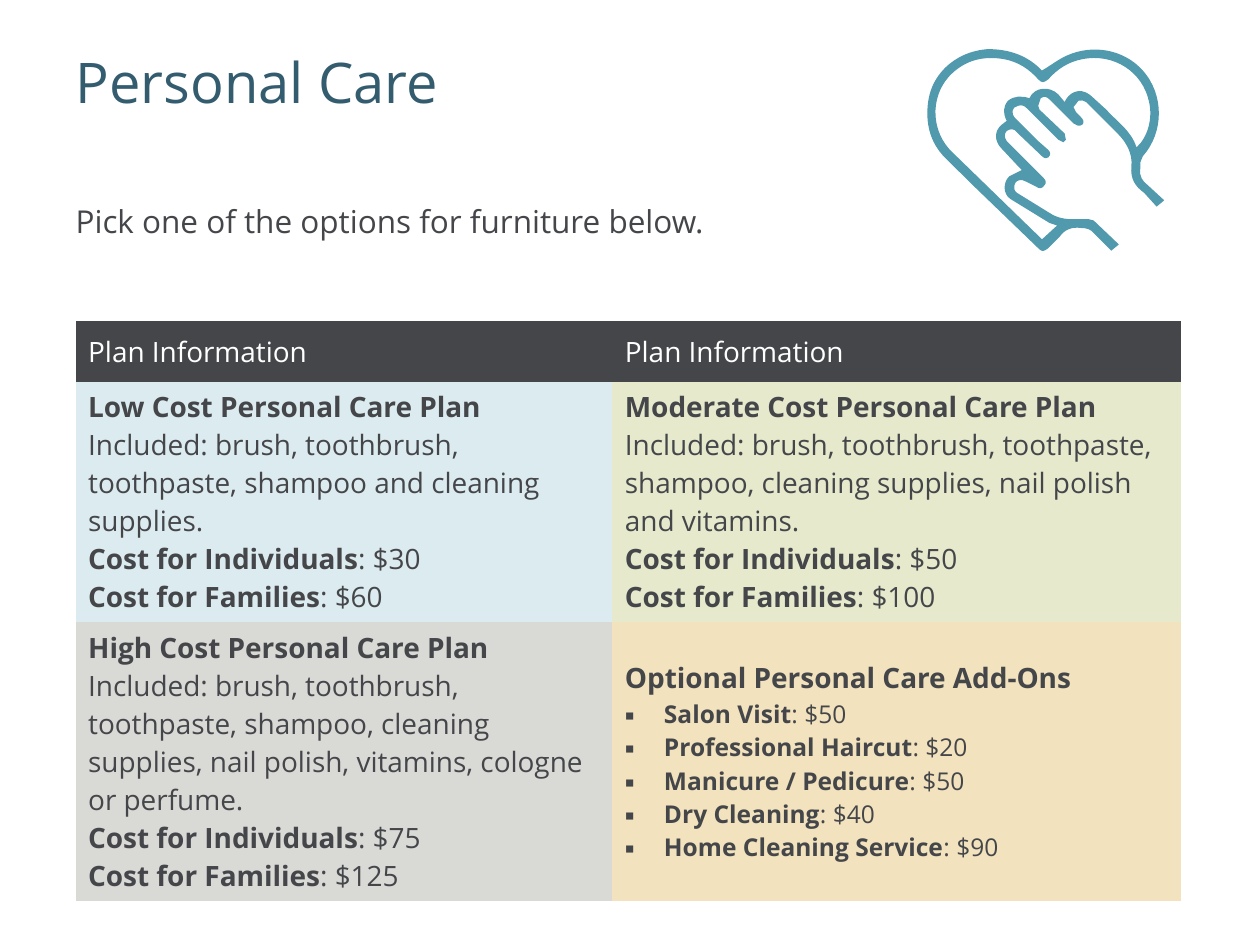
import dataclasses
import typing

import lxml.etree
import pptx
import pptx.dml.color
import pptx.enum.text
import pptx.oxml.ns
import pptx.util

Inches = pptx.util.Inches
qn = pptx.oxml.ns.qn
FONT = "Open Sans"
NO_STYLE = "{2D5ABB26-0587-4C30-8999-92F81FD0307C}"
COLUMN_WIDTHS = (4.26, 4.51)
ROW_HEIGHTS = (0.48, 1.91, 2.21)
COLORS = {
    "title": "345C6F",
    "ink": "44464A",
    "white": "FFFFFF",
    "low": "DCEBEF",
    "moderate": "E6E9CC",
    "high": "D9D9D6",
    "extras": "F2E2BD",
    "icon": "5199AD",
}


@dataclasses.dataclass
class Line:
    bold: str = ""
    plain: str = ""
    size: int = 16
    bullet: bool = False


@dataclasses.dataclass
class Panel:
    lines: list[Line]
    fill: str
    ink: str = "ink"


def plan(name: str, included: str, single: int, family: int, fill: str) -> Panel:
    return Panel([
        Line(f"{name} Cost Personal Care Plan"),
        Line(plain=f"Included: brush, toothbrush, toothpaste, {included}."),
        Line("Cost for Individuals", f": ${single}"),
        Line("Cost for Families", f": ${family}"),
    ], fill)


ADD_ONS = {
    "Salon Visit": 50,
    "Professional Haircut": 20,
    "Manicure / Pedicure": 50,
    "Dry Cleaning": 40,
    "Home Cleaning Service": 90,
}
HEADER = Panel([Line(plain="Plan Information")], "ink", "white")
EXTRAS = Panel(
    [Line("Optional Personal Care Add-Ons")]
    + [Line(name, f": ${cost}", 14, True) for name, cost in ADD_ONS.items()],
    "extras",
)
PANELS = [
    [HEADER, HEADER],
    [
        plan("Low", "shampoo and cleaning supplies", 30, 60, "low"),
        plan("Moderate", "shampoo, cleaning supplies, nail polish and vitamins", 50, 100, "moderate"),
    ],
    [
        plan("High", "shampoo, cleaning supplies, nail polish, vitamins, cologne or perfume", 75, 125, "high"),
        EXTRAS,
    ],
]

HEART_AND_HAND = [
    (8.88, 1.94), (8.82, 1.99), (8.68, 1.85),
    (8.66, 1.82, 8.62, 1.81, 8.58, 1.81), (8.51, 1.8, 8.45, 1.82, 8.41, 1.88),
    (8.32, 1.97), (8.28, 2, 8.27, 2, 8.24, 1.97), (7.69, 1.44), (7.48, 1.23),
    (7.4, 1.14, 7.36, 1.03, 7.36, 0.9), (7.36, 0.76, 7.4, 0.64, 7.5, 0.54),
    (7.59, 0.45, 7.71, 0.4, 7.84, 0.39), (8.01, 0.39, 8.15, 0.44, 8.26, 0.55),
    (8.27, 0.56), (8.34, 0.52, 8.4, 0.47, 8.47, 0.44),
    (8.67, 0.35, 8.92, 0.39, 9.07, 0.56), (9.24, 0.75, 9.24, 1.05, 9.07, 1.24),
    (9.05, 1.29), (9.05, 1.34), (9.04, 1.4, 9.07, 1.44, 9.11, 1.47),
    (9.24, 1.59), (9.18, 1.64), (9.08, 1.53), (9.01, 1.48, 8.97, 1.42, 8.98, 1.32),
    (8.99, 1.22, 8.94, 1.13, 8.87, 1.06), (8.62, 0.81),
    (8.6, 0.8, 8.58, 0.79, 8.56, 0.8), (8.52, 0.85), (8.54, 0.89), (8.57, 0.92),
    (8.6, 0.95, 8.61, 0.97, 8.59, 0.99), (8.56, 1.01, 8.54, 0.99, 8.52, 0.98),
    (8.33, 0.79), (8.31, 0.77, 8.29, 0.76, 8.26, 0.78), (8.24, 0.84), (8.25, 0.87),
    (8.45, 1.06), (8.46, 1.11), (8.44, 1.13), (8.4, 1.11), (8.15, 0.86),
    (8.13, 0.84, 8.11, 0.83, 8.08, 0.84), (8.03, 0.85, 8.02, 0.9, 8.06, 0.94),
    (8.24, 1.12), (8.32, 1.19), (8.34, 1.21, 8.34, 1.23, 8.32, 1.25),
    (8.31, 1.26, 8.29, 1.26, 8.27, 1.24), (8.07, 1.05),
    (8.05, 1.02, 8.02, 1.02, 7.99, 1.04), (7.97, 1.06, 7.97, 1.09, 7.99, 1.12),
    (8.02, 1.15), (8.28, 1.41), (8.3, 1.43, 8.31, 1.45, 8.29, 1.47),
    (8.27, 1.5, 8.25, 1.5, 8.22, 1.48), (8.14, 1.44),
    (8.11, 1.42, 8.07, 1.43, 8.06, 1.45), (8.04, 1.48, 8.05, 1.52, 8.07, 1.53),
    (8.33, 1.69), (8.39, 1.73, 8.45, 1.74, 8.52, 1.74), (8.64, 1.74), (8.68, 1.75),
]
HEART_INSIDE = [
    (9.02, 1.17), (9.11, 1.09, 9.15, 0.94, 9.12, 0.81),
    (9.07, 0.57, 8.84, 0.42, 8.59, 0.47), (8.48, 0.49, 8.39, 0.55, 8.32, 0.63),
    (8.28, 0.66, 8.27, 0.66, 8.24, 0.63), (8.17, 0.55, 8.08, 0.49, 7.97, 0.47),
    (7.8, 0.44, 7.65, 0.48, 7.53, 0.61), (7.38, 0.78, 7.39, 1.05, 7.56, 1.21),
    (8.25, 1.88), (8.28, 1.91), (8.27, 1.9), (8.39, 1.79), (8.33, 1.77), (8.02, 1.58),
    (7.96, 1.54, 7.96, 1.45, 8.01, 1.4), (8.11, 1.35), (8.09, 1.33), (7.95, 1.18),
    (7.89, 1.12, 7.89, 1.04, 7.95, 0.99), (7.99, 0.96),
    (7.96, 0.9, 7.96, 0.85, 8, 0.8), (8.05, 0.76, 8.11, 0.76, 8.17, 0.78),
    (8.21, 0.69, 8.33, 0.68, 8.4, 0.75), (8.45, 0.81), (8.46, 0.79),
    (8.51, 0.71, 8.6, 0.7, 8.67, 0.77), (8.78, 0.87),
    (8.87, 0.97, 8.98, 1.04, 9.02, 1.17),
]


def color(name: str) -> pptx.dml.color.RGBColor:
    return pptx.dml.color.RGBColor.from_string(COLORS[name])


def style(span: typing.Any, size: int, ink: str, bold: bool = False) -> None:
    span.font.name = FONT
    span.font.size = pptx.util.Pt(size)
    span.font.bold = bold
    span.font.color.rgb = color(ink)


def add_text(page: typing.Any, text: str, place: tuple[float, ...], size: int, ink: str) -> typing.Any:
    frame = page.shapes.add_textbox(*map(Inches, place)).text_frame
    frame.word_wrap = True
    frame.margin_left = frame.margin_top = frame.margin_right = frame.margin_bottom = 0
    frame.text = text
    style(frame.paragraphs[0].runs[0], size, ink)
    return frame.paragraphs[0]


def add_bullet(para: typing.Any) -> None:
    properties = para._p.get_or_add_pPr()
    properties.set("marL", str(Inches(0.31)))
    properties.set("indent", str(Inches(-0.31)))
    lxml.etree.SubElement(properties, qn("a:buFont")).set("typeface", FONT)
    lxml.etree.SubElement(properties, qn("a:buChar")).set("char", "▪")


def fill_cell(cell: typing.Any, panel: Panel) -> None:
    cell.fill.solid()
    cell.fill.fore_color.rgb = color(panel.fill)
    cell.vertical_anchor = pptx.enum.text.MSO_ANCHOR.MIDDLE
    cell.text_frame.text = "\n".join(line.bold or line.plain for line in panel.lines)
    for para, line in zip(cell.text_frame.paragraphs, panel.lines):
        style(para.runs[0], line.size, panel.ink, bool(line.bold))
        if line.bold and line.plain:
            span = para.add_run()
            span.text = line.plain
            style(span, line.size, panel.ink)
        if line.bullet:
            add_bullet(para)


def add_plans(page: typing.Any) -> None:
    place = map(Inches, (0.6, 2.55, sum(COLUMN_WIDTHS), sum(ROW_HEIGHTS)))
    table = page.shapes.add_table(3, 2, *place).table
    table.first_row = table.horz_banding = False
    table._tbl.tblPr.find(qn("a:tableStyleId")).text = NO_STYLE
    for column, width in zip(table.columns, COLUMN_WIDTHS):
        column.width = Inches(width)
    for row, height, panels in zip(table.rows, ROW_HEIGHTS, PANELS):
        row.height = Inches(height)
        for cell, panel in zip(row.cells, panels):
            fill_cell(cell, panel)


def bend(segment: typing.Any, part: tuple[float, ...], left: int, top: int) -> None:
    segment.tag = qn("a:cubicBezTo")
    for index in (0, 1):
        point = lxml.etree.Element(qn("a:pt"))
        point.set("x", str(Inches(part[2 * index]) - left))
        point.set("y", str(Inches(part[2 * index + 1]) - top))
        segment.insert(index, point)


def add_icon(page: typing.Any) -> None:
    outer, inner = (
        [tuple(map(Inches, part[-2:])) for part in outline]
        for outline in (HEART_AND_HAND, HEART_INSIDE)
    )
    builder = page.shapes.build_freeform(*outer[0])
    builder.add_line_segments(outer[1:])
    builder.move_to(*inner[0])
    builder.add_line_segments(inner[1:])
    icon = builder.convert_to_shape()
    segments = list(icon._element.iter(qn("a:lnTo")))
    for segment, part in zip(segments, HEART_AND_HAND[1:] + HEART_INSIDE[1:]):
        if len(part) == 6:
            bend(segment, part, icon.left, icon.top)
    icon.shadow.inherit = False
    icon.fill.solid()
    icon.fill.fore_color.rgb = color("icon")
    icon.line.fill.background()


def main() -> None:
    deck = pptx.Presentation()
    deck.slide_width, deck.slide_height = Inches(10), Inches(7.5)
    page = deck.slides.add_slide(deck.slide_layouts[6])
    title = add_text(page, "Personal Care", (0.6, 0.35, 9, 1.25), 32, "title")
    title.line_spacing = 1.05
    prompt = "Pick one of the options for furniture below."
    add_text(page, prompt, (0.6, 1.6, 7.72, 1.63), 18, "ink").space_after = pptx.util.Pt(12)
    add_plans(page)
    add_icon(page)
    deck.save("out.pptx")


if __name__ == "__main__":
    main()
